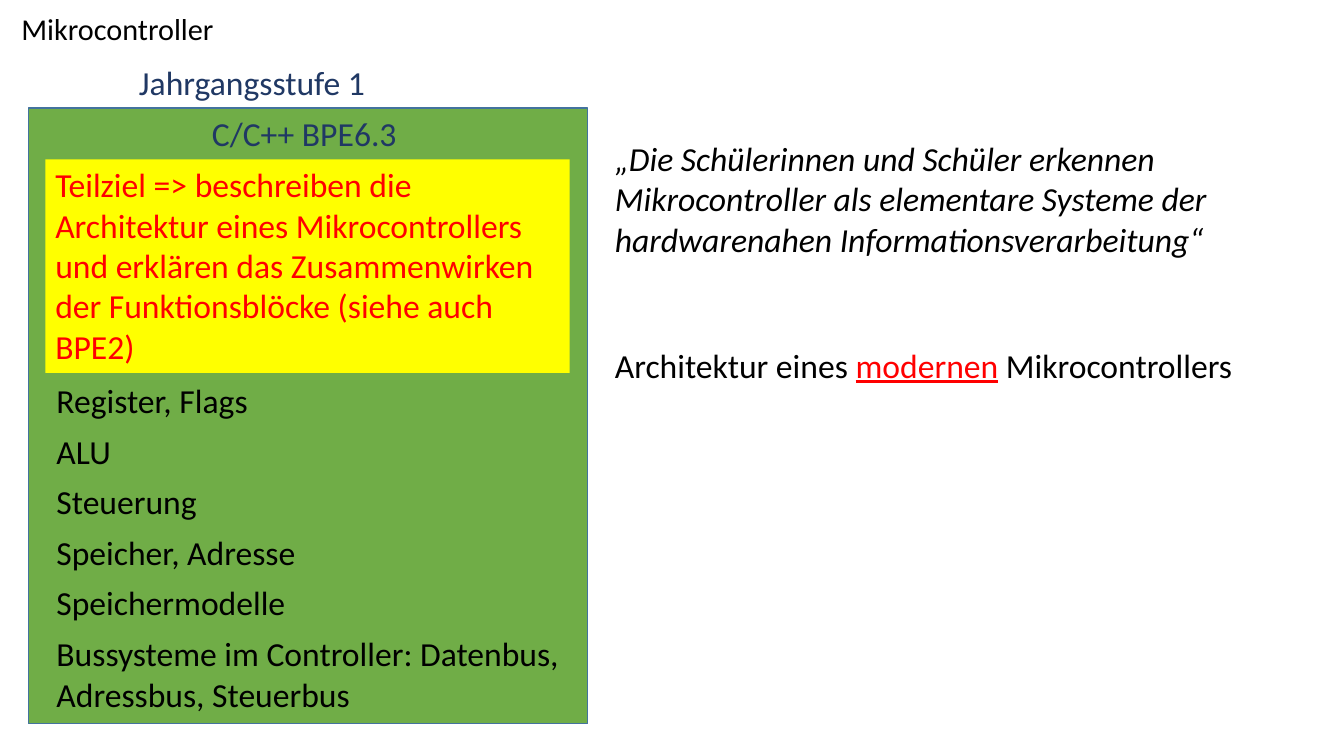
from pptx import Presentation
from pptx.dml.color import RGBColor
from pptx.enum import shapes, text
from pptx.util import Inches, Pt

BLACK = RGBColor(0x00, 0x00, 0x00)
RED = RGBColor(0xFF, 0x00, 0x00)
YELLOW = RGBColor(0xFF, 0xFF, 0x00)
GREEN = RGBColor(0x70, 0xAD, 0x47)
EDGE = RGBColor(0x43, 0x73, 0x9E)
NAVY = RGBColor(0x20, 0x38, 0x64)
LEFT, MID = text.PP_ALIGN.LEFT, text.PP_ALIGN.CENTER
TOP, CENTER = text.MSO_ANCHOR.TOP, text.MSO_ANCHOR.MIDDLE
NO_GRID = "{2D5ABB26-0587-4C30-8999-92F81FD0307C}"


def write(frame, words, size=24, color=BLACK, align=LEFT, anchor=TOP,
          italic=None, line=None, wrap=True):
    """Fill a frame with one paragraph; a run is (words, color, underline)."""
    frame.word_wrap = wrap
    frame.vertical_anchor = anchor
    para = frame.paragraphs[0]
    para.alignment = align
    para.line_spacing = line
    runs = [(words, color, None)] if isinstance(words, str) else words
    for part, tint, under in runs:
        run = para.add_run()
        run.text = part
        font = run.font
        font.name, font.size = "Calibri", Pt(size)
        font.color.rgb = tint
        font.italic, font.underline = italic, under


def block(x, y, w, h, fill):
    box = slide.shapes.add_shape(shapes.MSO_SHAPE.RECTANGLE, Inches(x),
                                 Inches(y), Inches(w), Inches(h))
    box.shadow.inherit = False
    box.fill.solid()
    box.fill.fore_color.rgb = fill
    return box


deck = Presentation()
deck.slide_width, deck.slide_height = Inches(13.33), Inches(7.5)
slide = deck.slides.add_slide(deck.slide_layouts[5])

# Title
title = slide.shapes.title
title.left, title.top = Inches(0), Inches(0)
title.width, title.height = Inches(2.5), Inches(0.6)
title.text_frame.auto_size = text.MSO_AUTO_SIZE.NONE
title.text_frame.margin_right = Inches(0.27)
write(title.text_frame, "Mikrocontroller", size=21.6, align=MID,
      anchor=CENTER, line=0.9)

# Green unit panel
panel = block(0.28, 1.07, 5.55, 6.11, GREEN)
panel.line.color.rgb = EDGE
panel.line.width = Pt(1)
write(panel.text_frame, "C/C++ BPE6.3 ", color=NAVY, align=MID)

# Yellow goal
goal = block(0.45, 1.58, 5.2, 2.12, YELLOW)
goal.line.fill.background()
write(goal.text_frame, "Teilziel => beschreiben die Architektur eines "
      "Mikrocontrollers und erklären das Zusammenwirken der "
      "Funktionsblöcke (siehe auch BPE2)", color=RED)

# Year label, quotation and topic
notes = [
    (1.27, 0.57, 2.46, 0.5, "Jahrgangsstufe 1",
     dict(color=NAVY, align=MID, wrap=False)),
    (6, 1.32, 7.21, 1.31, "„Die Schülerinnen und Schüler erkennen "
     "Mikrocontroller als elementare Systeme der hardwarenahen "
     "Informationsverarbeitung“", dict(italic=True)),
    (6, 3.37, 6.36, 0.5, [("Architektur eines ", BLACK, None),
                          ("modernen", RED, True),
                          (" Mikrocontrollers", BLACK, None)], {}),
]
for x, y, w, h, words, style in notes:
    box = slide.shapes.add_textbox(Inches(x), Inches(y), Inches(w), Inches(h))
    write(box.text_frame, words, **style)

# Topic table
topics = ["Register, Flags", "ALU", "Steuerung", "Speicher, Adresse",
          "Speichermodelle",
          "Bussysteme im Controller: Datenbus, Adressbus, Steuerbus"]
table = slide.shapes.add_table(len(topics), 1, Inches(0.46), Inches(3.74),
                               Inches(5.2), Inches(3.4)).table
table.first_row = table.horz_banding = False
table._tbl.tblPr[0].text = NO_GRID
for i, topic in enumerate(topics):
    table.rows[i].height = Inches(0.9 if topic == topics[-1] else 0.5)
    cell = table.cell(i, 0)
    cell.fill.background()
    cell.vertical_anchor = CENTER
    write(cell.text_frame, topic, anchor=None)

deck.save("out.pptx")
